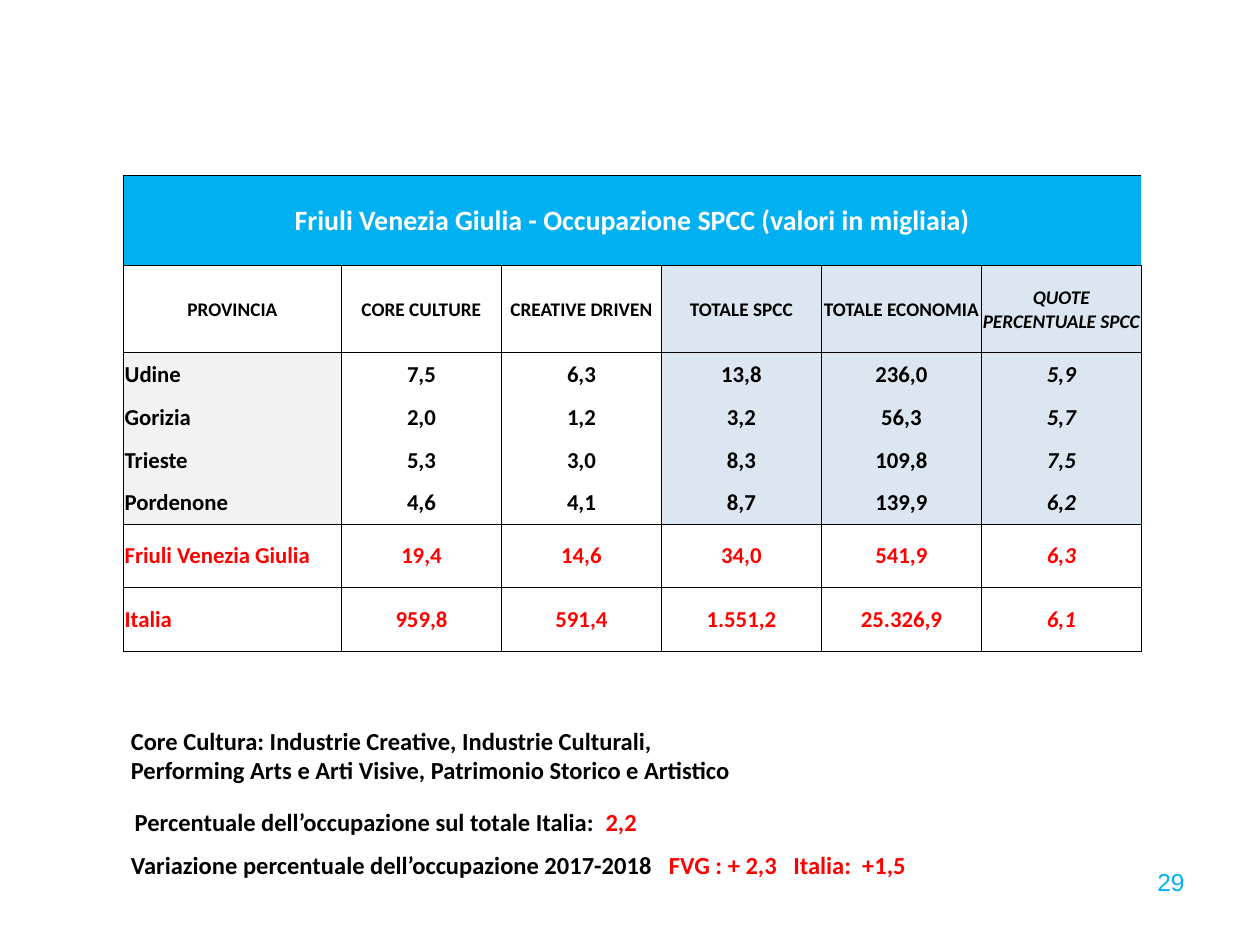
import dataclasses

import lxml.etree
import pptx
import pptx.dml.color
import pptx.enum.text
import pptx.oxml.ns
import pptx.util

Inches = pptx.util.Inches
Pt = pptx.util.Pt
ALIGN = pptx.enum.text.PP_ALIGN


@dataclasses.dataclass(frozen=True)
class Theme:
    font: str = "Calibri"
    number_font: str = "Arial"
    black: str = "000000"
    white: str = "FFFFFF"
    red: str = "FF0000"
    blue: str = "00B0F0"
    pale_blue: str = "DCE6F1"
    grey: str = "F2F2F2"
    title_size: float = 16
    header_size: float = 11
    body_size: float = 13
    note_size: float = 14
    border: float = 0.5


THEME = Theme()

TITLE = "Friuli Venezia Giulia - Occupazione SPCC (valori in migliaia)"
HEADERS = ["PROVINCIA", "CORE CULTURE", "CREATIVE DRIVEN", "TOTALE SPCC",
           "TOTALE ECONOMIA", "QUOTE PERCENTUALE SPCC"]
PROVINCES = [
    ["Udine", "7,5", "6,3", "13,8", "236,0", "5,9"],
    ["Gorizia", "2,0", "1,2", "3,2", "56,3", "5,7"],
    ["Trieste", "5,3", "3,0", "8,3", "109,8", "7,5"],
    ["Pordenone", "4,6", "4,1", "8,7", "139,9", "6,2"],
]
TOTALS = [
    ["Friuli Venezia Giulia", "19,4", "14,6", "34,0", "541,9", "6,3"],
    ["Italia", "959,8", "591,4", "1.551,2", "25.326,9", "6,1"],
]
COLUMN_WIDTHS = [1.73] + [1.27] * 5
ROW_HEIGHTS = [0.72, 0.69] + [0.34] * 4 + [0.5, 0.51]
QUOTA_COLUMN = len(HEADERS) - 1


def rgb(color):
    return pptx.dml.color.RGBColor.from_string(color)


def format_run(run, size, color, font=THEME.font, bold=True, italic=False):
    run.font.name = font
    run.font.size = Pt(size)
    run.font.bold = bold
    run.font.italic = italic
    run.font.color.rgb = rgb(color)


def set_borders(cell, sides):
    """Draw the given sides (of L, R, T, B) and clear the others."""
    properties = cell._tc.get_or_add_tcPr()
    qn = pptx.oxml.ns.qn
    for side in "LRTB":
        line = lxml.etree.SubElement(properties, qn(f"a:ln{side}"), w=str(Pt(THEME.border)))
        if side in sides:
            fill = lxml.etree.SubElement(line, qn("a:solidFill"))
            lxml.etree.SubElement(fill, qn("a:srgbClr"), val=THEME.black)
        else:
            lxml.etree.SubElement(line, qn("a:noFill"))


def fill_cell(cell, text, size, color, fill, sides="LRTB", align=ALIGN.CENTER, italic=False):
    set_borders(cell, sides)
    cell.fill.solid()
    cell.fill.fore_color.rgb = rgb(fill)
    cell.margin_left = cell.margin_right = cell.margin_top = Inches(0.01)
    cell.margin_bottom = 0
    cell.vertical_anchor = pptx.enum.text.MSO_ANCHOR.MIDDLE
    paragraph = cell.text_frame.paragraphs[0]
    paragraph.text = text
    paragraph.alignment = align
    format_run(paragraph.runs[0], size, color, italic=italic)


def add_employment_table(slide):
    employment = slide.shapes.add_table(
        len(ROW_HEIGHTS), len(COLUMN_WIDTHS), Inches(0.98), Inches(1.39),
        Inches(sum(COLUMN_WIDTHS)), Inches(sum(ROW_HEIGHTS))).table
    for column, width in zip(employment.columns, COLUMN_WIDTHS):
        column.width = Inches(width)
    for row, height in zip(employment.rows, ROW_HEIGHTS):
        row.height = Inches(height)

    # Title across all columns
    title = employment.cell(0, 0)
    title.merge(employment.cell(0, QUOTA_COLUMN))
    fill_cell(title, TITLE, THEME.title_size, THEME.white, THEME.blue, sides="LTB")

    # Column headers; the last three columns are shaded
    shades = [THEME.white] * 3 + [THEME.pale_blue] * 3
    for col, (header, shade) in enumerate(zip(HEADERS, shades)):
        fill_cell(employment.cell(1, col), header, THEME.header_size, THEME.black,
                  shade, italic=col == QUOTA_COLUMN)

    # Provinces share one frame; totals are boxed and red
    province_shades = [THEME.grey] + shades[1:]
    total_shades = [THEME.white] * len(HEADERS)
    last = len(PROVINCES) - 1
    for index, values in enumerate(PROVINCES + TOTALS):
        is_total = index > last
        sides = "LR"
        if is_total or index == 0:
            sides += "T"
        if is_total or index == last:
            sides += "B"
        row_shades = total_shades if is_total else province_shades
        for col, (value, shade) in enumerate(zip(values, row_shades)):
            fill_cell(employment.cell(index + 2, col), value, THEME.body_size,
                      THEME.red if is_total else THEME.black, shade, sides,
                      ALIGN.CENTER if col else ALIGN.LEFT, italic=col == QUOTA_COLUMN)


def add_note(slide, left, top, width, height, lines):
    """Each line is a list of (text, color) pieces."""
    note = slide.shapes.add_textbox(Inches(left), Inches(top), Inches(width), Inches(height))
    frame = note.text_frame
    frame.word_wrap = False
    frame.auto_size = pptx.enum.text.MSO_AUTO_SIZE.SHAPE_TO_FIT_TEXT
    for index, pieces in enumerate(lines):
        paragraph = frame.add_paragraph() if index else frame.paragraphs[0]
        for text, color in pieces:
            run = paragraph.add_run()
            run.text = text
            format_run(run, THEME.note_size, color)


def add_page_number(slide, number):
    page = slide.shapes.add_textbox(Inches(7.17), Inches(6.83), Inches(2.33), Inches(0.52))
    page.text_frame.word_wrap = True
    paragraph = page.text_frame.paragraphs[0]
    paragraph.text = number
    paragraph.alignment = ALIGN.RIGHT
    format_run(paragraph.runs[0], THEME.note_size, THEME.blue, THEME.number_font, bold=False)


def main():
    deck = pptx.Presentation()
    deck.slide_width, deck.slide_height = Inches(10), Inches(7.5)
    slide = deck.slides.add_slide(deck.slide_layouts[6])

    add_page_number(slide, "29")

    # Notes and table
    add_note(slide, 0.97, 6.36, 4.31, 0.34, [
        [("Percentuale dell’occupazione sul totale Italia:  ", THEME.black),
         ("2,2", THEME.red)]])
    add_note(slide, 0.94, 5.71, 5, 0.57, [
        [("Core Cultura: Industrie Creative, Industrie Culturali,", THEME.black)],
        [("Performing Arts e Arti Visive, Patrimonio Storico e Artistico", THEME.black)]])
    add_employment_table(slide)
    add_note(slide, 0.94, 6.7, 6.48, 0.34, [
        [("Variazione percentuale dell’occupazione 2017-2018   ", THEME.black),
         ("FVG : + 2,3   Italia:  +1,5", THEME.red)]])

    deck.save("out.pptx")


if __name__ == "__main__":
    main()
